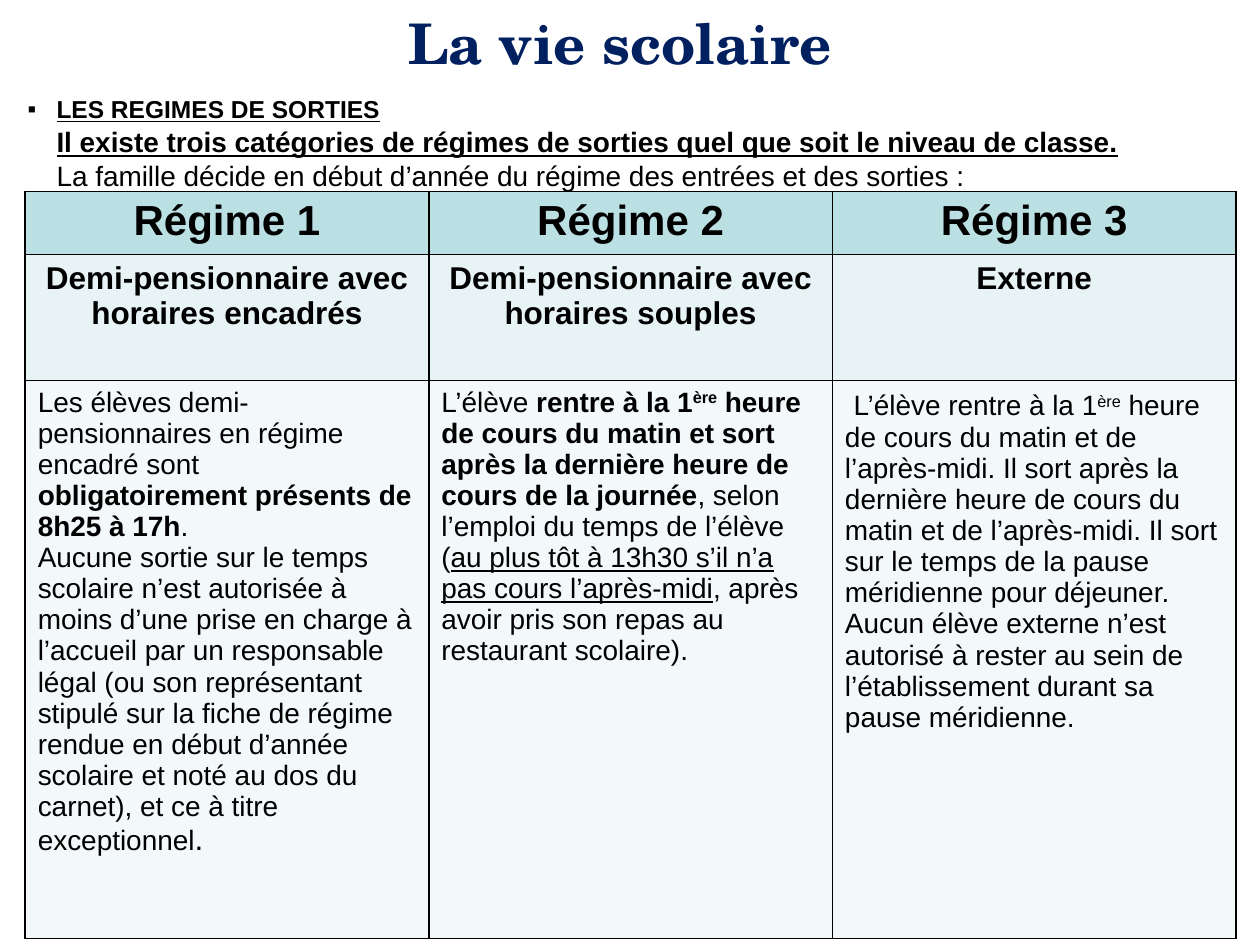
from lxml import etree
from pptx import Presentation
from pptx.dml.color import RGBColor
from pptx.enum import text
from pptx.oxml.ns import qn
from pptx.util import Inches, Pt

BLACK = RGBColor(0x00, 0x00, 0x00)
NAVY = RGBColor(0x00, 0x20, 0x60)
ROW_FILLS = [RGBColor(0xBB, 0xE0, 0xE3), RGBColor(0xE7, 0xF3, 0xF4), RGBColor(0xF3, 0xF9, 0xFA)]
CENTER = text.PP_ALIGN.CENTER


def write(paragraph, runs, size):
    """Add (wording, style) runs; style letters: b bold, u underline, s superscript, L 18 pt."""
    for wording, style in runs:
        run = paragraph.add_run()
        run.text = wording
        font = run.font
        font.name = "Arial"
        font.size = Pt(18 if "L" in style else size)
        font.color.rgb = BLACK
        font.bold = "b" in style
        font.underline = "u" in style
        if "s" in style:
            run._r.get_or_add_rPr().set("baseline", "30000")


def set_borders(cell):
    properties = cell._tc.get_or_add_tcPr()
    for position, side in enumerate(("lnL", "lnR", "lnT", "lnB")):
        line = etree.Element(qn(f"a:{side}"), w=str(Pt(1)))
        fill = etree.SubElement(line, qn("a:solidFill"))
        etree.SubElement(fill, qn("a:srgbClr"), val=str(BLACK))
        properties.insert(position, line)


prs = Presentation()
prs.slide_width, prs.slide_height = Inches(10), Inches(7.5)
slide = prs.slides.add_slide(prs.slide_layouts[5])

# Title
title = slide.shapes.title
title.left, title.top, title.width, title.height = Inches(0.51), Inches(0.02), Inches(8.82), Inches(0.65)
title.text_frame.auto_size = text.MSO_AUTO_SIZE.NONE
title.text_frame.vertical_anchor = text.MSO_ANCHOR.TOP
heading = title.text_frame.paragraphs[0]
heading.alignment = CENTER
run = heading.add_run()
run.text = "La vie scolaire"
run.font.name, run.font.size, run.font.bold = "TeX Gyre Schola", Pt(32), True
run.font.color.rgb = NAVY

# Section heading with its square bullet
section = slide.shapes.add_textbox(Inches(0.12), Inches(0.69), Inches(9.21), Inches(0.35)).text_frame
section.word_wrap = True
section.vertical_anchor = text.MSO_ANCHOR.MIDDLE
topic = section.paragraphs[0]
write(topic, [("LES REGIMES DE SORTIES", "bu")], 14)
indent = topic._p.get_or_add_pPr()
indent.set("marL", str(Inches(0.23)))
indent.set("indent", str(-Inches(0.23)))
etree.SubElement(indent, qn("a:buFont"), typeface="Arial")
etree.SubElement(indent, qn("a:buChar"), char="▪")

# Introduction
intro = slide.shapes.add_textbox(Inches(0.35), Inches(0.94), Inches(9.45), Inches(0.64)).text_frame
intro.word_wrap = True
write(intro.paragraphs[0], [
    ("Il existe trois catégories de régimes de sorties quel que soit le niveau de classe.", "bu")], 16)
write(intro.add_paragraph(), [
    ("La famille décide en début d’année du régime des entrées et des sorties :", "")], 16)

# Table of regimes: name, audience, then paragraphs of rules
regimes = [
    ("Régime 1", "Demi-pensionnaire avec horaires encadrés", [
        [("Les élèves demi-pensionnaires en régime encadré sont ", ""),
         ("obligatoirement présents de 8h25 à 17h", "b"), (".", "")],
        [("Aucune sortie sur le temps scolaire n’est autorisée à moins d’une prise en charge à "
          "l’accueil par un responsable légal (ou son représentant stipulé sur la fiche de régime "
          "rendue en début d’année scolaire et noté au dos du carnet), et ce à titre exceptionnel", ""),
         (".", "L")],
    ]),
    ("Régime 2", "Demi-pensionnaire avec horaires souples", [
        [("L’élève ", ""), ("rentre à la 1", "b"), ("ère", "bs"),
         (" heure de cours du matin et sort après la dernière heure de cours de la journée", "b"),
         (", selon l’emploi du temps de l’élève (", ""),
         ("au plus tôt à 13h30 s’il n’a pas cours l’après-midi", "u"),
         (", après avoir pris son repas au restaurant scolaire).", "")],
    ]),
    ("Régime 3", "Externe", [
        [(" ", "bL"), ("L’élève rentre à la 1", ""), ("ère", "s"),
         (" heure de cours du matin et de l’après-midi. Il sort après la dernière heure de cours du "
          "matin et de l’après-midi. Il sort sur le temps de la pause méridienne pour déjeuner. "
          "Aucun élève externe n’est autorisé à rester au sein de l’établissement durant sa pause "
          "méridienne.", "")],
    ]),
]
table = slide.shapes.add_table(3, 3, Inches(0.2), Inches(1.52), Inches(9.61), Inches(5.93)).table
for row, height in zip(table.rows, (0.5, 1, 4.43)):
    row.height = Inches(height)
for column, (name, audience, rules) in enumerate(regimes):
    contents = [[[(name, "b")]], [[(audience, "b")]], rules]
    for row, (paragraphs, size) in enumerate(zip(contents, (24, 18, 16))):
        cell = table.cell(row, column)
        cell.fill.solid()
        cell.fill.fore_color.rgb = ROW_FILLS[row]
        set_borders(cell)
        for index, runs in enumerate(paragraphs):
            paragraph = cell.text_frame.paragraphs[0] if index == 0 else cell.text_frame.add_paragraph()
            if row < 2:
                paragraph.alignment = CENTER
            write(paragraph, runs, size)

prs.save("out.pptx")
